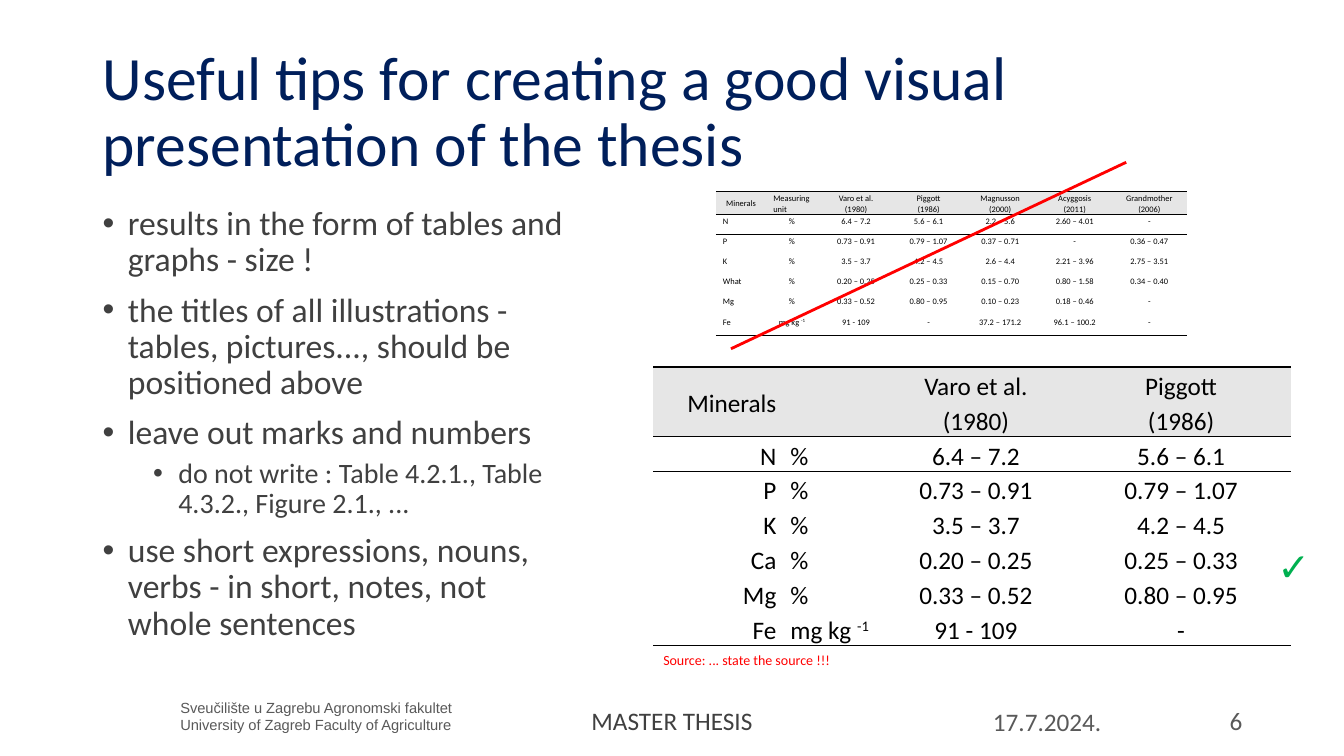
from lxml import etree
from pptx import Presentation
from pptx import util as u
from pptx.dml.color import RGBColor
from pptx.enum import shapes, text
from pptx.oxml.ns import qn

ALIGN = {"l": text.PP_ALIGN.LEFT, "c": text.PP_ALIGN.CENTER, "r": text.PP_ALIGN.RIGHT}
TOP, MID = text.MSO_ANCHOR.TOP, text.MSO_ANCHOR.MIDDLE
PLAIN = "{2D5ABB26-0587-4C30-8999-92F81FD0307C}"
BLACK, DARK, GREY, RED = "000000", "404040", "595959", "FF0000"

TIPS = [
    (0, "results in the form of tables and graphs - size !"),
    (0, "the titles of all illustrations - tables, pictures..., should be positioned above"),
    (0, "leave out marks and numbers"),
    (1, "do not write : Table 4.2.1., Table 4.3.2., Figure 2.1., ..."),
    (0, "use short expressions, nouns, verbs - in short, notes, not whole sentences"),
]
# A caret marks the start of a superscript
SMALL = [
    ["Minerals", "Measuring\nunit", "Varo et al.\n(1980)", "Piggott\n(1986)",
     "Magnusson\n(2000)", "Acyggosis\n(2011)", "Grandmother\n(2006)"],
    ["N", "%", "6.4 – 7.2", "5.6 – 6.1", "2.2 – 5.6", "2.60 – 4.01", "-"],
    ["P", "%", "0.73 – 0.91", "0.79 – 1.07", "0.37 – 0.71", "-", "0.36 – 0.47"],
    ["K", "%", "3.5 – 3.7", "4.2 – 4.5", "2.6 – 4.4", "2.21 – 3.96", "2.75 – 3.51"],
    ["What", "%", "0.20 – 0.25", "0.25 – 0.33", "0.15 – 0.70", "0.80 – 1.58", "0.34 – 0.40"],
    ["Mg", "%", "0.33 – 0.52", "0.80 – 0.95", "0.10 – 0.23", "0.18 – 0.46", "-"],
    ["Fe", "mg kg ^-1", "91 - 109", "-", "37.2 – 171.2", "96.1 – 100.2", "-"],
]
# The large table keeps the first four columns
LARGE = [row[:4] for row in SMALL]
LARGE[0][1] = ""
LARGE[4][0] = "Ca"


def paint(code):
    return RGBColor.from_string(code)


def style(item, **form):
    for name, value in form.items():
        setattr(item, name, value)


def write(para, words, size, color, font="Calibri", bold=False):
    main, _, power = words.partition("^")
    for part, base in ((main, 0), (power, 30000)):
        if part:
            run = para.add_run()
            run.text = part
            style(run.font, size=u.Pt(size), name=font, bold=bold)
            run.font.color.rgb = paint(color)
            if base:
                run.font._element.set("baseline", str(base))


def add_box(slide, at, anchor=TOP):
    frame = slide.shapes.add_textbox(*map(u.Inches, at)).text_frame
    style(frame, word_wrap=True, vertical_anchor=anchor)
    return frame


def label(slide, at, words, size, color, align="l", anchor=TOP, space=1.0, **face):
    frame = add_box(slide, at, anchor)
    for i, line in enumerate(words.split("\n")):
        para = frame.add_paragraph() if i else frame.paragraphs[0]
        style(para, alignment=ALIGN[align], line_spacing=space)
        write(para, line, size, color, **face)


def add_tips(slide, at):
    frame = add_box(slide, at)
    for i, (level, words) in enumerate(TIPS):
        para = frame.add_paragraph() if i else frame.paragraphs[0]
        props = para._p.get_or_add_pPr()
        props.set("marL", str(u.Inches(0.25 + 0.5 * level)))
        props.set("indent", str(u.Inches(-0.25)))
        etree.SubElement(props, qn("a:buFont")).set("typeface", "Arial")
        etree.SubElement(props, qn("a:buChar")).set("char", "•")
        style(para, level=level, line_spacing=0.9,
              space_before=u.Pt((5 if level else 10) if i else 0))
        write(para, words, 20 if level else 24, DARK)


def rule(cell, side):
    line = etree.SubElement(cell._tc.get_or_add_tcPr(), qn("a:" + side), w=str(u.Pt(1)))
    fill = etree.SubElement(line, qn("a:solidFill"))
    etree.SubElement(fill, qn("a:srgbClr"), val=BLACK)


def fill_cell(cell, words, size, align, anchor):
    side = u.Inches(0.07)
    style(cell, margin_left=side, margin_right=side, margin_top=0, margin_bottom=0,
          vertical_anchor=anchor)
    for i, line in enumerate(words.split("\n")):
        para = cell.text_frame.add_paragraph() if i else cell.text_frame.paragraphs[0]
        style(para, alignment=ALIGN[align], line_spacing=1.15)
        write(para, line, size, BLACK)


def add_grid(slide, at, data, widths, heights, size, head, body, anchor):
    place = (*at, sum(widths), sum(heights))
    table = slide.shapes.add_table(len(data), len(widths), *map(u.Inches, place)).table
    style(table, first_row=False, horz_banding=False)
    table._tbl.tblPr.find(qn("a:tableStyleId")).text = PLAIN
    for col, width in zip(table.columns, widths):
        col.width = u.Inches(width)
    for r, row in enumerate(data):
        table.rows[r].height = u.Inches(heights[r])
        for c, words in enumerate(row):
            cell = table.cell(r, c)
            middle = MID if (r, c) == (0, 0) else anchor if r else TOP
            fill_cell(cell, words, size, (body if r else head)[c], middle)
            if r < 2:
                rule(cell, "lnT")
            if r in (0, len(data) - 1):
                rule(cell, "lnB")
            if r:
                cell.fill.background()
            else:
                cell.fill.solid()
                cell.fill.fore_color.rgb = paint("E6E6E6")


def strike(slide, start, end):
    line = slide.shapes.add_connector(shapes.MSO_CONNECTOR.STRAIGHT,
                                      *map(u.Inches, start + end))
    line.line.color.rgb = paint(RED)
    line.line.width = u.Pt(2)
    etree.SubElement(line._element.spPr, qn("a:effectLst"))


def main():
    deck = Presentation()
    style(deck, slide_width=u.Inches(13.33), slide_height=u.Inches(7.5))
    slide = deck.slides.add_slide(deck.slide_layouts[6])

    # Footer
    label(slide, (1.69, 6.88, 3.24, 0.47),
          "Sveučilište u Zagrebu Agronomski fakultet\n"
          "University of Zagreb Faculty of Agriculture", 10.5, GREY, font="Arial")
    label(slide, (5.08, 6.95, 3.17, 0.4), "MASTER THESIS", 18, DARK, "c")
    label(slide, (9.75, 6.96, 1.46, 0.4), "17.7.2024.", 18, GREY, anchor=MID)
    label(slide, (11.79, 6.95, 0.63, 0.4), "6", 18, GREY, "r", MID)

    # Title and tips
    label(slide, (0.92, 0.4, 11.5, 1.45),
          "Useful tips for creating a good visual presentation of the thesis",
          44, "001F5B", anchor=MID, space=0.9)
    add_tips(slide, (0.92, 2, 4.88, 4.76))

    # Bad table, struck out
    add_grid(slide, (7.1, 1.9), SMALL, [0.5, 0.51, 0.76, 0.68] + [0.74] * 3,
             [0.23] + [0.2] * 6, 6, "clccccc", "lcccccc", TOP)
    strike(slide, (7.25, 3.46), (11.17, 1.61))

    # Good table, with source and tick
    add_grid(slide, (6.48, 3.64), LARGE, [1.29, 0.97, 1.88, 2.19],
             [0.69] + [0.345] * 6, 18, "rlcc", "rlcc", MID)
    label(slide, (6.48, 6.41, 1.91, 0.27), "Source: ... state the source !!!",
          10, RED, anchor=MID)
    label(slide, (12.57, 5.33, 0.5, 0.55), "✓", 28, "00B050", font="Cabin", bold=True)

    deck.save("out.pptx")


if __name__ == "__main__":
    main()
